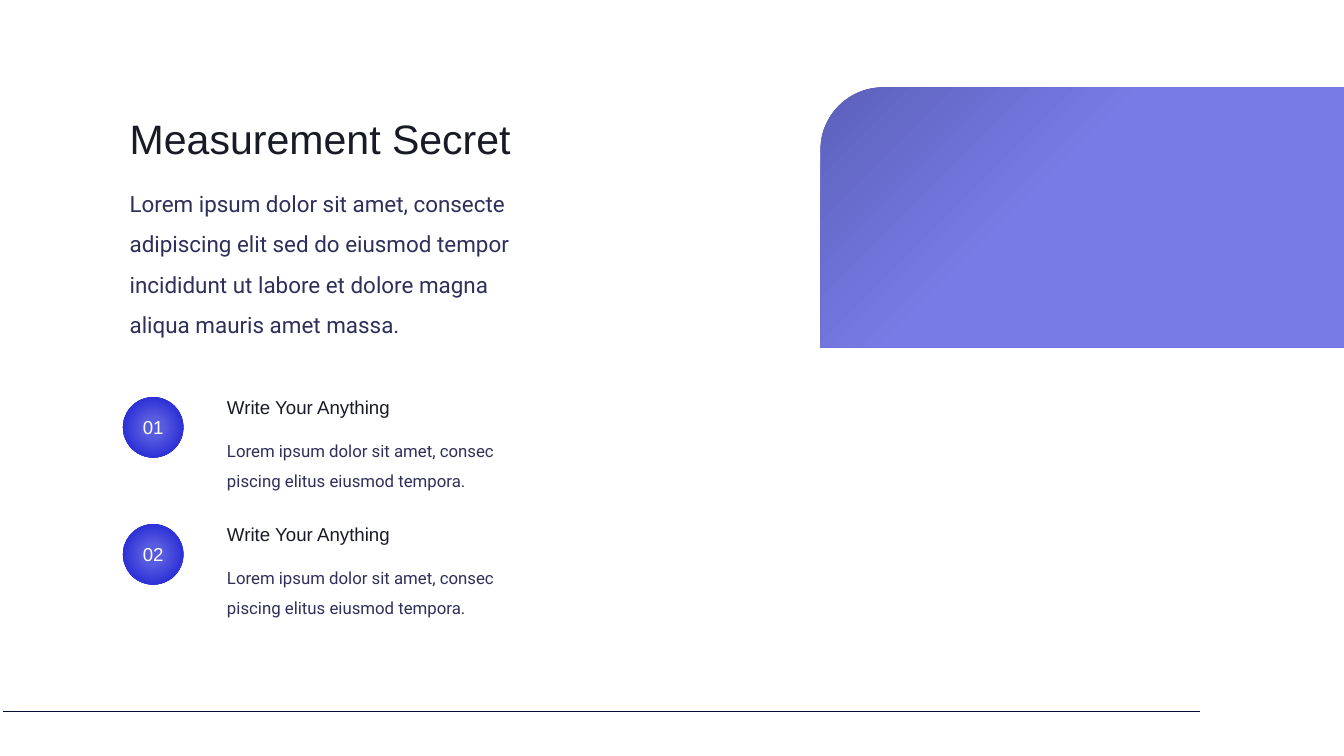
import pptx
import pptx.dml.color
import pptx.enum.shapes
import pptx.enum.text
import pptx.oxml
import pptx.oxml.ns
import pptx.util
from pptx.util import Inches

RGBColor = pptx.dml.color.RGBColor
Alignment = pptx.enum.text.PP_ALIGN
ShapeType = pptx.enum.shapes.MSO_SHAPE

HEADING = RGBColor(0x18, 0x1A, 0x26)
BODY = RGBColor(0x2F, 0x2F, 0x5B)
WHITE = RGBColor(0xFF, 0xFF, 0xFF)
RULE = RGBColor(0x06, 0x0D, 0x39)
LAVENDER = RGBColor(0x78, 0x7B, 0xE5)
DUSK = RGBColor(0x5C, 0x60, 0xBA)
BADGE_LIGHT = RGBColor(0x58, 0x5C, 0xDF)
BADGE_MIDDLE = RGBColor(0x2F, 0x33, 0xD7)
BADGE_DARK = RGBColor(0x27, 0x2C, 0xCD)

PANEL_STOPS = [(58, LAVENDER), (100, DUSK)]
BADGE_STOPS = [(0, BADGE_LIGHT), (23, BADGE_LIGHT), (69, BADGE_MIDDLE), (97, BADGE_DARK)]

INTRO = ("Lorem ipsum dolor sit amet, consecte adipiscing elit sed do eiusmod tempor "
         "incididunt ut labore et dolore magna aliqua mauris amet massa.")
ITEM_HEADING = "Write Your Anything"
ITEM_TEXT = "Lorem ipsum dolor sit amet, consec piscing elitus eiusmod tempora."

LEFT = 1.83
ITEM_TOP = 5.91
ITEM_STEP = 1.89
BADGE_SIZE = 0.9


def add_text(slide, text, left, top, width, height, *, size, color, font="Arial",
             spacing=1.0, align=Alignment.LEFT, placeholder=None):
    """Fill the given placeholder, or a new text box, with one paragraph."""
    box = [Inches(value) for value in (left, top, width, height)]
    shape = placeholder or slide.shapes.add_textbox(*box)
    shape.left, shape.top, shape.width, shape.height = box
    frame = shape.text_frame
    frame.text = text
    frame.word_wrap = True
    frame.auto_size = pptx.enum.text.MSO_AUTO_SIZE.SHAPE_TO_FIT_TEXT
    frame.vertical_anchor = pptx.enum.text.MSO_ANCHOR.TOP
    paragraph = frame.paragraphs[0]
    paragraph.alignment = align
    paragraph.line_spacing = spacing
    paragraph.font.name = font
    paragraph.font.size = pptx.util.Pt(size)
    paragraph.font.color.rgb = color


def add_gradient_shape(slide, kind, left, top, width, height, stops, focus):
    """Add a shape with a circular gradient; focus is left, top, right, bottom in percent."""
    shape = slide.shapes.add_shape(
        kind, Inches(left), Inches(top), Inches(width), Inches(height))
    shape.shadow.inherit = False
    shape.line.fill.background()
    shape.fill.background()
    stop_xml = "".join(
        f'<a:gs pos="{position * 1000}"><a:srgbClr val="{color}"/></a:gs>'
        for position, color in stops)
    edges = " ".join(f'{side}="{value * 1000}"' for side, value in zip("ltrb", focus))
    gradient = pptx.oxml.parse_xml(
        f'<a:gradFill {pptx.oxml.ns.nsdecls("a")} rotWithShape="1"><a:gsLst>{stop_xml}</a:gsLst>'
        f'<a:path path="circle"><a:fillToRect {edges}/></a:path></a:gradFill>')
    properties = shape.element.spPr
    properties.replace(properties.find(pptx.oxml.ns.qn("a:noFill")), gradient)
    return shape


def add_rule(slide, left, right, y):
    line = slide.shapes.add_connector(
        pptx.enum.shapes.MSO_CONNECTOR.STRAIGHT,
        Inches(left), Inches(y), Inches(right), Inches(y))
    line.line.color.rgb = RULE
    line.line.width = pptx.util.Pt(0.5)
    line.element.spPr.append(
        pptx.oxml.parse_xml(f'<a:effectLst {pptx.oxml.ns.nsdecls("a")}/>'))


def add_panel(slide):
    panel = add_gradient_shape(slide, ShapeType.ROUND_1_RECTANGLE, 14.17, -0.66, 3.87, 7.79,
                               PANEL_STOPS, (100, 100, 0, 0))
    panel.adjustments[0] = 0.24
    panel.rotation = 270


def add_item(slide, number, top):
    add_gradient_shape(slide, ShapeType.OVAL, LEFT, top, BADGE_SIZE, BADGE_SIZE,
                       BADGE_STOPS, (50, 50, 50, 50))
    add_text(slide, f"{number:02}", LEFT, top + 0.23, BADGE_SIZE, 0.44,
             size=20, color=WHITE, align=Alignment.CENTER)
    add_text(slide, ITEM_TEXT, 3.28, top + 0.45, 4.87, 0.96,
             size=18, color=BODY, font="Roboto", spacing=1.5)
    add_text(slide, ITEM_HEADING, 3.28, top - 0.07, 4, 0.44, size=20, color=HEADING)


def main():
    presentation = pptx.Presentation()
    presentation.slide_width = Inches(20)
    presentation.slide_height = Inches(11.25)
    slide = presentation.slides.add_slide(presentation.slide_layouts.get_by_name("Title Only"))

    add_rule(slide, 0.04, 17.86, 10.59)
    add_panel(slide)
    add_text(slide, "Measurement Secret", LEFT, 1.64, 6.6, 0.84,
             size=44, color=HEADING, placeholder=slide.shapes.title)
    add_text(slide, INTRO, LEFT, 2.58, 6.08, 2.47,
             size=24, color=BODY, font="Roboto", spacing=1.5)
    for index in range(2):
        add_item(slide, index + 1, ITEM_TOP + index * ITEM_STEP)

    presentation.save("out.pptx")


if __name__ == "__main__":
    main()
